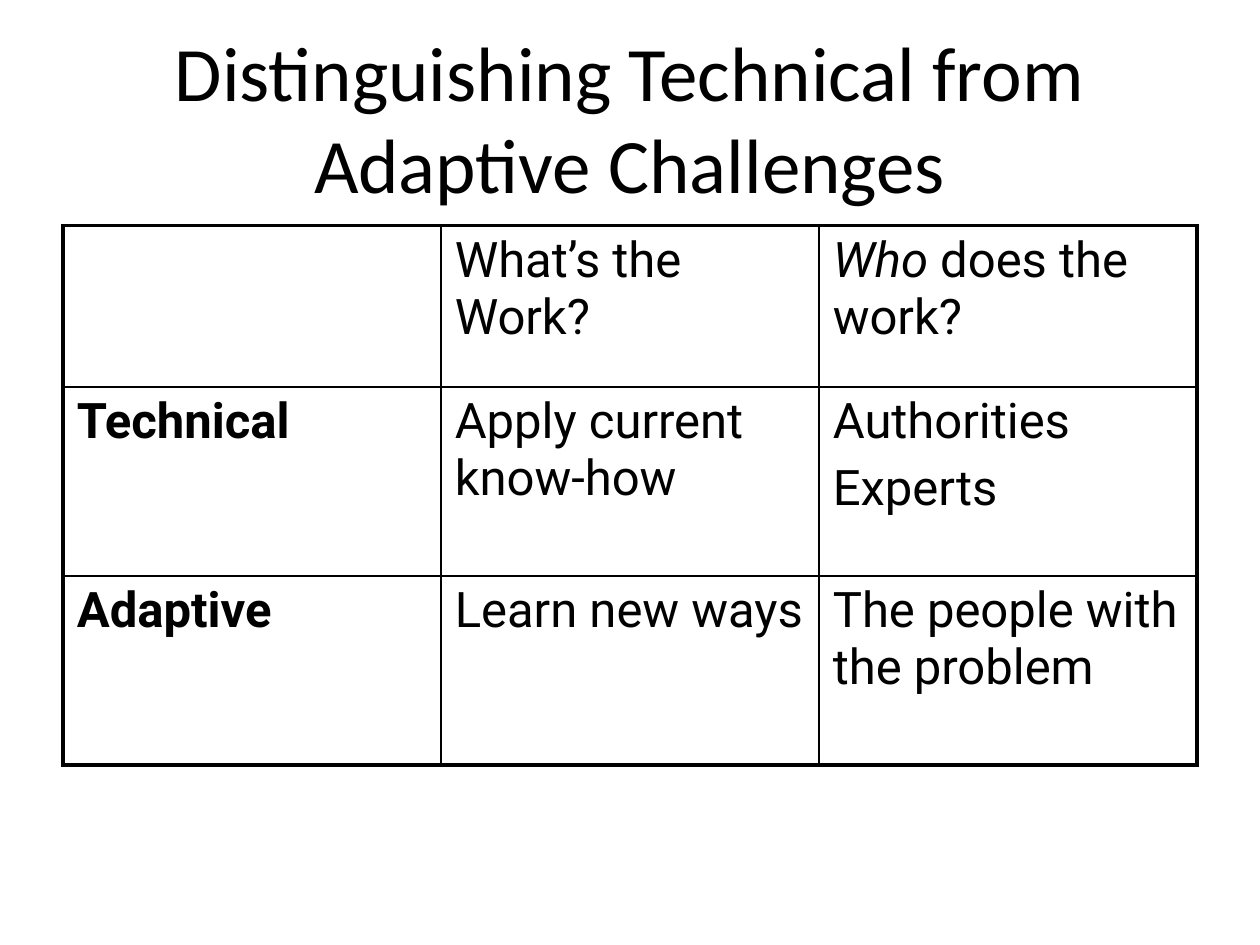
from lxml.etree import SubElement
from pptx import Presentation
from pptx.dml.color import RGBColor
from pptx.enum.text import MSO_ANCHOR, PP_ALIGN
from pptx.oxml.ns import qn
from pptx.util import Inches, Pt

COLORS = {"text": "000000", "border": "000000"}
OUTER_BORDER, INNER_BORDER = Pt(2.25), Pt(1)

# Each cell is a list of paragraphs, each paragraph a list of (text, style) runs
ROWS = [
    [[], [[("What’s the Work?", "")]],
     [[("Who", "italic"), (" does the work?", "")]]],
    [[[("Technical", "bold")]], [[("Apply current know-how", "")]],
     [[("Authorities", "")], [("Experts", "")]]],
    [[[("Adaptive", "bold")]], [[("Learn new ways", "")]],
     [[("The people with the problem", "")]]],
]
ROW_HEIGHTS = [1.28, 1.5, 1.5]
COLUMN_WIDTHS = [3, 3, 3]


def add_run(paragraph, text, font_name, size, style=""):
    run = paragraph.add_run()
    run.text = text
    run.font.name = font_name
    run.font.size = Pt(size)
    run.font.bold = style == "bold"
    run.font.italic = style == "italic"
    run.font.color.rgb = RGBColor.from_string(COLORS["text"])


def add_title(slide, text):
    shape = slide.shapes.add_textbox(Inches(0.5), Inches(0.3), Inches(9), Inches(1.25))
    frame = shape.text_frame
    frame.word_wrap = True
    frame.vertical_anchor = MSO_ANCHOR.MIDDLE
    paragraph = frame.paragraphs[0]
    paragraph.alignment = PP_ALIGN.CENTER
    add_run(paragraph, text, "Calibri", 44)


def set_borders(cell, outer_sides):
    properties = cell._tc.get_or_add_tcPr()
    for side in "LRTB":
        width = OUTER_BORDER if side in outer_sides else INNER_BORDER
        line = SubElement(properties, qn(f"a:ln{side}"), w=str(int(width)))
        fill = SubElement(line, qn("a:solidFill"))
        SubElement(fill, qn("a:srgbClr"), val=COLORS["border"])


def fill_cell(cell, paragraphs):
    cell.margin_left = cell.margin_right = Inches(0.11)
    cell.margin_top = cell.margin_bottom = Inches(0.05)
    frame = cell.text_frame
    for index, runs in enumerate(paragraphs):
        paragraph = frame.add_paragraph() if index else frame.paragraphs[0]
        paragraph.space_before = Pt(5.6)
        for text, style in runs:
            add_run(paragraph, text, "Roboto", 28, style)


def add_challenge_table(slide):
    table = slide.shapes.add_table(
        len(ROWS), len(COLUMN_WIDTHS), Inches(0.5), Inches(1.79),
        Inches(sum(COLUMN_WIDTHS)), Inches(sum(ROW_HEIGHTS))).table
    table.first_row = table.horz_banding = False
    for column, width in zip(table.columns, COLUMN_WIDTHS):
        column.width = Inches(width)
    for row, height in zip(table.rows, ROW_HEIGHTS):
        row.height = Inches(height)

    # Heavy frame around the table, thin lines inside
    last_row, last_column = len(ROWS) - 1, len(COLUMN_WIDTHS) - 1
    for r, row in enumerate(ROWS):
        for c, paragraphs in enumerate(row):
            cell = table.cell(r, c)
            edges = {"L": c == 0, "R": c == last_column, "T": r == 0, "B": r == last_row}
            set_borders(cell, [side for side, outer in edges.items() if outer])
            cell.fill.background()
            fill_cell(cell, paragraphs)


def main():
    presentation = Presentation()
    presentation.slide_width, presentation.slide_height = Inches(10), Inches(7.5)
    slide = presentation.slides.add_slide(presentation.slide_layouts[6])
    add_title(slide, "Distinguishing Technical from Adaptive Challenges")
    add_challenge_table(slide)
    presentation.save("out.pptx")


if __name__ == "__main__":
    main()
